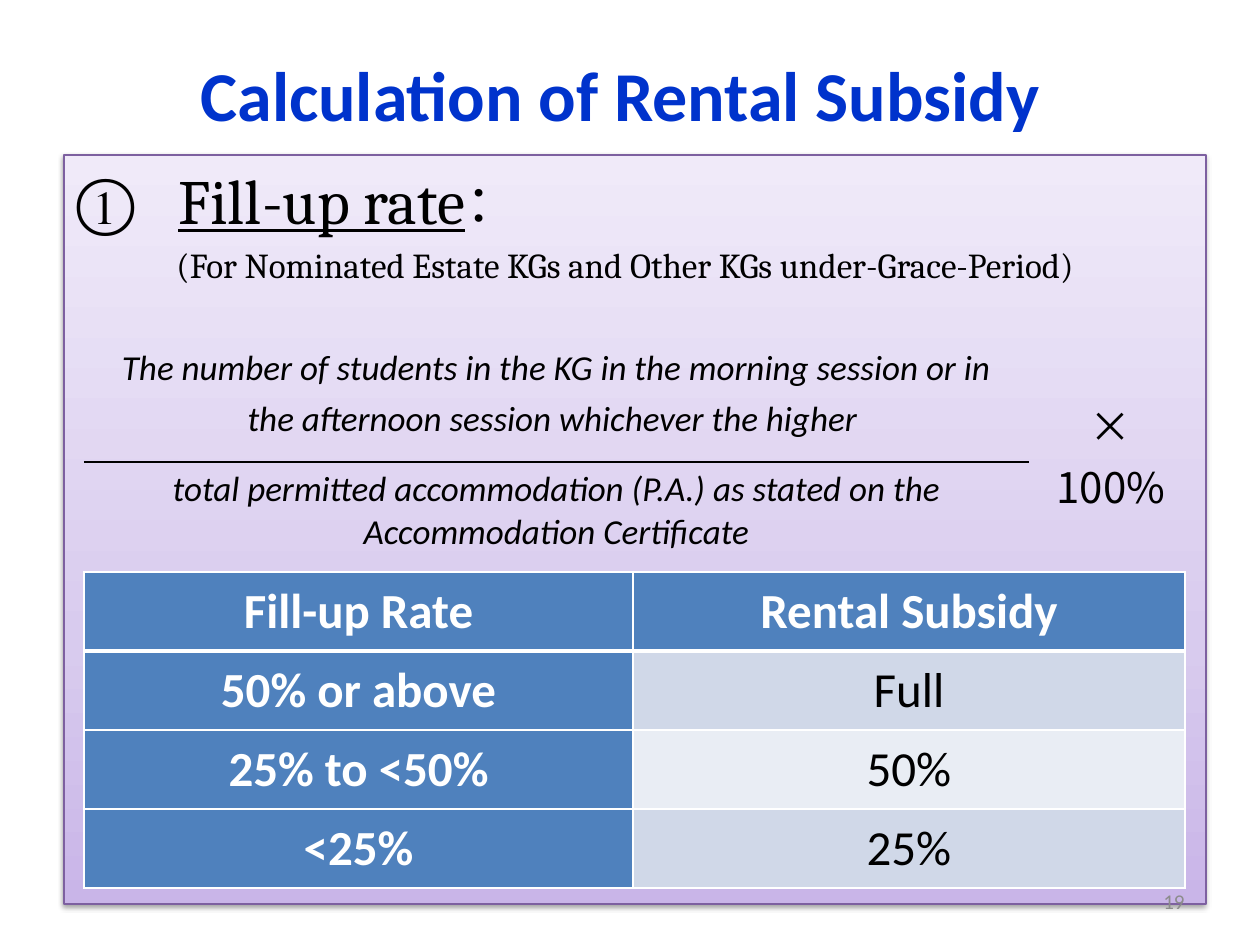
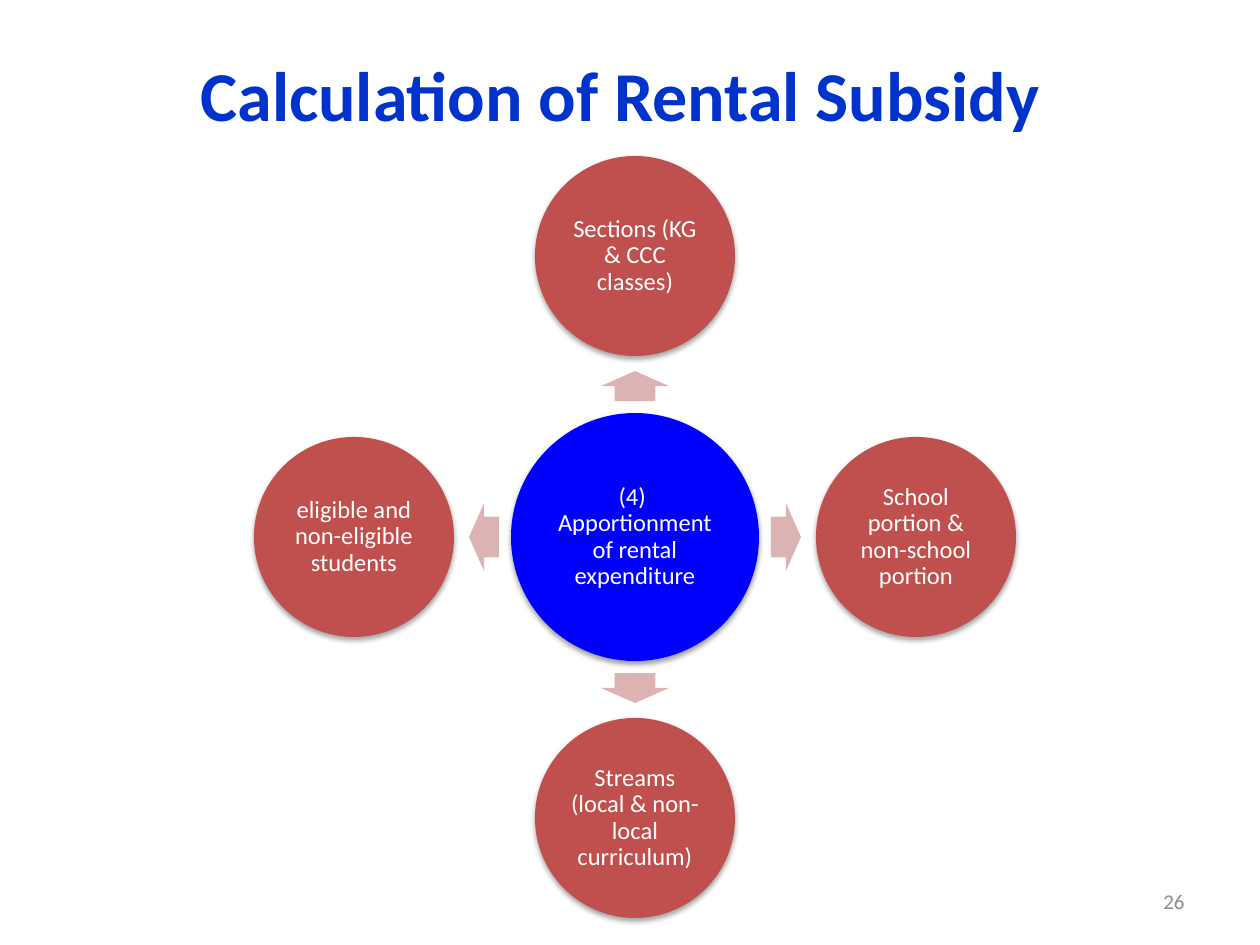
from math import cos, radians, sin

from lxml.etree import SubElement
from pptx import Presentation
from pptx.dml.color import RGBColor
from pptx.enum.shapes import MSO_SHAPE
from pptx.enum.text import MSO_ANCHOR, PP_ALIGN
from pptx.oxml.ns import qn
from pptx.util import Emu, Pt

COLOURS = {
    "title": "0033CC", "number": "8C8C8C", "text": "000000", "white": "FFFFFF",
    "panel_line": "7D60A0", "panel_low": "C9B5E8", "panel_mid": "D8CBEE", "panel_high": "F0EAF9",
    "header": "4F81BD", "band_dark": "D0D8E8", "band_light": "E9EDF4",
    "hub": "0000FF", "spoke": "C0504D", "arrow": "DCB3B2",
}
BODY, SERIF, CJK = "Calibri", "Cambria", "Noto Sans CJK SC"
PLAIN_TABLE = "{2D5ABB26-0587-4C30-8999-92F81FD0307C}"
TITLE = "Calculation of Rental Subsidy"
SUBSIDY_ROWS = [
    ("Fill-up Rate", "Rental Subsidy"),
    ("50% or above", "Full"),
    ("25% to <50%", "50%"),
    ("<25%", "25%"),
]
SPOKES = [
    (270, "Sections (KG & CCC classes)"),
    (0, "School portion & non-school portion"),
    (90, "Streams (local & non-local curriculum)"),
    (180, "eligible and non-eligible students"),
]


def px(length):
    """Turn whole pixels, 126 to the inch, into EMU."""
    return Emu(round(length * 914400 / 126))


def colour(name):
    """Look up a named colour."""
    return RGBColor.from_string(COLOURS[name])


def add_run(para, text, size, ink="text", font=BODY, **style):
    """Add one run; style holds bold, italic or underline."""
    span = para.add_run()
    span.text = text
    span.font.size = Pt(size)
    span.font.name = font
    span.font.color.rgb = colour(ink)
    for name, value in style.items():
        setattr(span.font, name, value)
    if font != BODY:
        SubElement(span.font._element, qn("a:ea"), typeface=font)


def set_frame(frame, anchor=MSO_ANCHOR.TOP, inset=None):
    """Wrap a text frame and set its anchor and optional equal insets."""
    frame.word_wrap = True
    frame.vertical_anchor = anchor
    if inset is not None:
        frame.margin_left = frame.margin_right = px(inset)
        frame.margin_top = frame.margin_bottom = px(inset)


def add_text(page, bounds, align, anchor, text, size, ink, **style):
    """Add a one-paragraph text box."""
    box = page.shapes.add_textbox(*map(px, bounds))
    set_frame(box.text_frame, anchor)
    para = box.text_frame.paragraphs[0]
    para.alignment = align
    add_run(para, text, size, ink, **style)


def add_title(page):
    """Add the shared slide title."""
    add_text(page, (35, 45, 1170, 90), PP_ALIGN.CENTER, MSO_ANCHOR.TOP,
             TITLE, 40, "title", bold=True)


def add_number(page, number):
    """Add the page number in the lower right corner."""
    add_text(page, (903, 876, 294, 50), PP_ALIGN.RIGHT, MSO_ANCHOR.MIDDLE,
             number, 12, "number")


def add_colour(parent, name, alpha=None):
    """Add a colour element, with optional opacity in percent."""
    tint = SubElement(parent, qn("a:srgbClr"), val=COLOURS[name])
    if alpha:
        SubElement(tint, qn("a:alpha"), val=str(alpha * 1000))


def add_shape(page, kind, bounds, fill):
    """Add a flat preset shape without outline."""
    shape = page.shapes.add_shape(kind, *map(px, bounds))
    shape.shadow.inherit = False
    shape.fill.solid()
    shape.fill.fore_color.rgb = colour(fill)
    shape.line.fill.background()
    return shape


def add_shadow(shape, alpha, distance):
    """Give a shape a soft shadow straight below it."""
    effects = shape._element.spPr.find(qn("a:effectLst"))
    shadow = SubElement(effects, qn("a:outerShdw"), blurRad=str(Pt(3.1)),
                        dist=str(Pt(distance)), dir="5400000", rotWithShape="0")
    add_colour(shadow, "text", alpha)


def set_gradient(shape, stops):
    """Fill a shape with colour stops running from bottom to top."""
    shape.fill.gradient()
    shape.fill.gradient_angle = 90
    stop_list = shape._element.spPr.find(qn("a:gradFill")).find(qn("a:gsLst"))
    for stop in list(stop_list):
        stop_list.remove(stop)
    for place, name in stops:
        add_colour(SubElement(stop_list, qn("a:gs"), pos=str(place * 1000)), name)


def set_indent(para, left, first, before):
    """Set the paragraph indents and the space before it."""
    para.alignment = PP_ALIGN.LEFT
    para.space_before = Pt(before)
    properties = para._p.get_or_add_pPr()
    properties.set("marL", str(px(left)))
    properties.set("indent", str(px(first)))
    return properties


def add_panel(page):
    """Add the shaded panel with its numbered heading."""
    panel = add_shape(page, MSO_SHAPE.RECTANGLE, (64, 155, 1142, 749), "panel_mid")
    set_gradient(panel, [(0, "panel_low"), (35, "panel_mid"), (100, "panel_high")])
    panel.line.color.rgb = colour("panel_line")
    panel.line.width = Pt(0.75)
    add_shadow(panel, 38, 1.6)
    set_frame(panel.text_frame)
    heading = panel.text_frame.paragraphs[0]
    properties = set_indent(heading, 102, -102, 7)
    SubElement(properties, qn("a:buAutoNum"), type="circleNumWdWhitePlain")
    add_run(heading, "Fill-up rate", 36, font=SERIF, underline=True)
    add_run(heading, "：", 36, font=SERIF)
    note = panel.text_frame.add_paragraph()
    set_indent(note, 102, -2, 4)
    add_run(note, "(For Nominated Estate KGs and Other KGs under-Grace-Period)", 20, font=SERIF)


def add_table(page, left, top, widths, heights):
    """Add a table without any built-in style."""
    size = px(left), px(top), px(sum(widths)), px(sum(heights))
    table = page.shapes.add_table(len(heights), len(widths), *size).table
    table.first_row = table.horz_banding = False
    table._tbl.tblPr.find(qn("a:tableStyleId")).text = PLAIN_TABLE
    for column, width in zip(table.columns, widths):
        column.width = px(width)
    for row, height in zip(table.rows, heights):
        row.height = px(height)
    return table


def set_borders(cell, name, widths):
    """Draw cell borders; widths maps L, R, T, B, in that order, to points."""
    properties = cell._tc.get_or_add_tcPr()
    for side, width in widths.items():
        line = SubElement(properties, qn(f"a:ln{side}"), w=str(Pt(width)))
        add_colour(SubElement(line, qn("a:solidFill")), name)


def set_cell(cell, text, size, anchor=MSO_ANCHOR.TOP, **style):
    """Write one centred run into a cell."""
    cell.vertical_anchor = anchor
    para = cell.text_frame.paragraphs[0]
    para.alignment = PP_ALIGN.CENTER
    add_run(para, text, size, **style)
    return para


def add_formula(page):
    """Add the fill-up rate fraction."""
    table = add_table(page, 84, 334, (945, 164), (128, 83))
    above, below, factor = table.cell(0, 0), table.cell(1, 0), table.cell(0, 1)
    factor.merge(table.cell(1, 1))
    numerator = set_cell(above, "The number of students in the KG in the morning session or in "
                         "the afternoon session whichever the higher ", 20, italic=True)
    numerator.line_spacing = 1.17
    set_cell(below, "total permitted accommodation (P.A.) as stated on the "
             "Accommodation Certificate", 20, italic=True)
    set_cell(factor, "× 100%", 24, MSO_ANCHOR.MIDDLE, font=CJK)
    set_borders(above, "text", {"B": 1})
    set_borders(below, "text", {"T": 1})


def add_subsidy_table(page):
    """Add the table of subsidy levels by fill-up rate."""
    table = add_table(page, 84, 572, (549, 552), [79] * len(SUBSIDY_ROWS))
    for i, row in enumerate(SUBSIDY_ROWS):
        for j, text in enumerate(row):
            cell = table.cell(i, j)
            strong = i == 0 or j == 0
            band = "band_dark" if i % 2 else "band_light"
            cell.margin_left = cell.margin_right = px(9)
            cell.margin_top = cell.margin_bottom = 0
            set_cell(cell, text, 28, MSO_ANCHOR.MIDDLE,
                     ink="white" if strong else "text", bold=strong)
            set_borders(cell, "white", {"L": 1, "R": 1, "T": 3 if i == 1 else 1,
                                        "B": 3 if i == 0 else 1})
            cell.fill.solid()
            cell.fill.fore_color.rgb = colour("header" if strong else band)


def add_circle(page, x, y, size, fill, lines, shadow):
    """Add a labelled circle around a centre point."""
    bounds = (x - size / 2, y - size / 2, size, size)
    circle = add_shape(page, MSO_SHAPE.OVAL, bounds, fill)
    add_shadow(circle, *shadow)
    set_frame(circle.text_frame, MSO_ANCHOR.MIDDLE, 2)
    para = circle.text_frame.paragraphs[0]
    para.alignment = PP_ALIGN.CENTER
    para.line_spacing = 0.9
    for i, line in enumerate(lines):
        if i:
            para.add_line_break()
        add_run(para, line, 14, "white")


def add_arrow(page, x, y, angle):
    """Add a block arrow around a centre point."""
    arrow = add_shape(page, MSO_SHAPE.RIGHT_ARROW, (x - 15, y - 34, 30, 68), "arrow")
    arrow.adjustments[0], arrow.adjustments[1] = 0.6, 0.5
    arrow.rotation = angle


def add_apportionment(page):
    """Add the hub with four spokes."""
    x, y = 635, 537
    add_circle(page, x, y, 248, "hub",
               ("(4) ", "Apportionment of rental expenditure"), (38, 1.6))
    for angle, label in SPOKES:
        dx, dy = cos(radians(angle)), sin(radians(angle))
        add_arrow(page, x + 151 * dx, y + 151 * dy, angle)
        add_circle(page, x + 281 * dx, y + 281 * dy, 200, "spoke", (label,), (35, 1.8))


def main():
    """Build both slides and save the deck."""
    deck = Presentation()
    deck.slide_width, deck.slide_height = px(1260), px(945)
    blank = deck.slide_layouts[6]

    page = deck.slides.add_slide(blank)
    add_panel(page)
    add_number(page, "19")
    add_title(page)
    add_formula(page)
    add_subsidy_table(page)

    page = deck.slides.add_slide(blank)
    add_number(page, "26")
    add_title(page)
    add_apportionment(page)

    deck.save("out.pptx")


if __name__ == "__main__":
    main()
